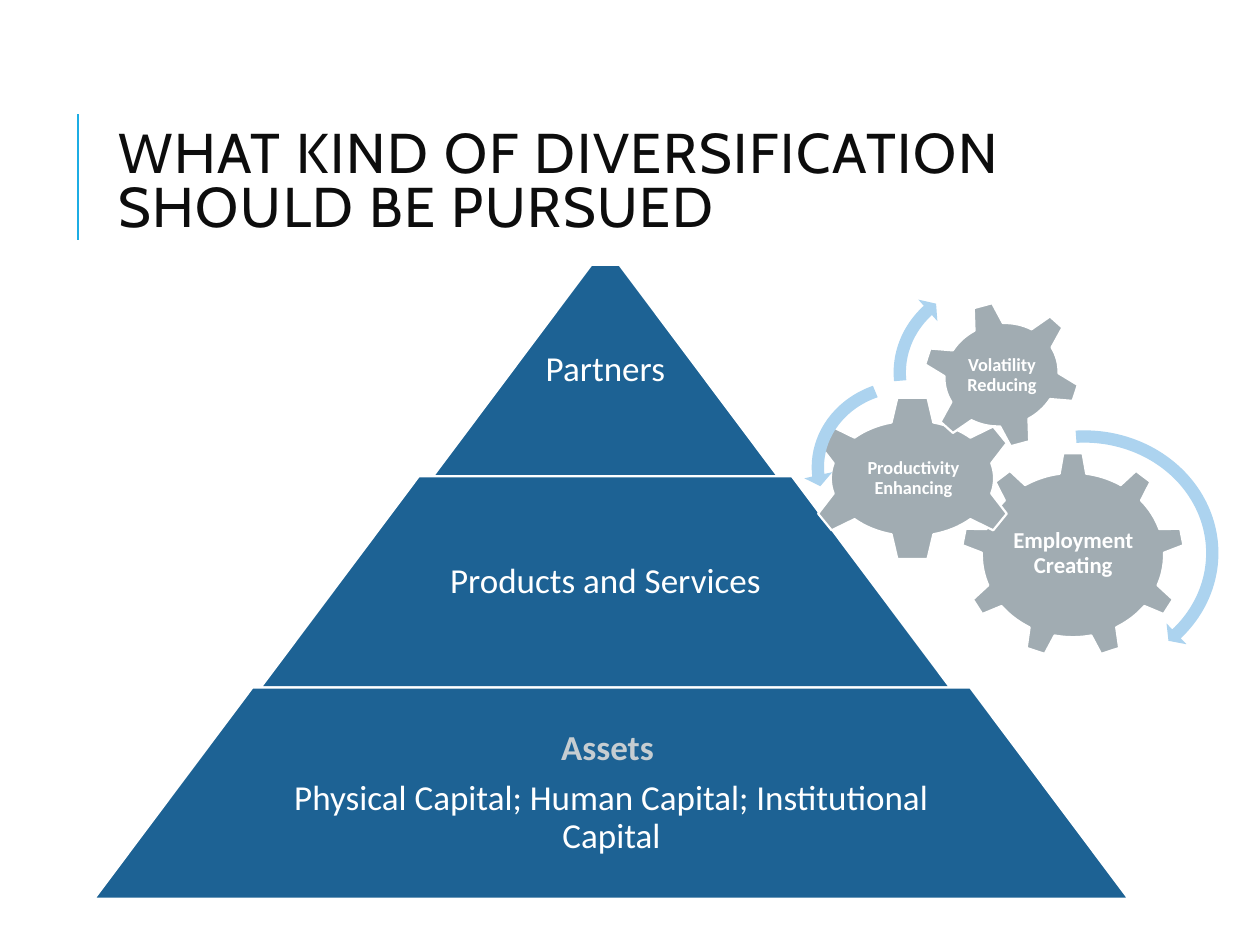
from pptx import Presentation
from pptx.dml.color import RGBColor
from pptx.enum.shapes import MSO_CONNECTOR, MSO_SHAPE
from pptx.enum.text import MSO_ANCHOR, PP_ALIGN
from pptx.oxml.ns import qn
from pptx.util import Cm, Pt
from lxml import etree

STRAIGHT = MSO_CONNECTOR.STRAIGHT
TRAPEZOID = MSO_SHAPE.TRAPEZOID
GEAR_6, GEAR_9 = MSO_SHAPE.GEAR_6, MSO_SHAPE.GEAR_9
ARC, LEFT_ARC = MSO_SHAPE.CIRCULAR_ARROW, MSO_SHAPE.LEFT_CIRCULAR_ARROW
MIDDLE = MSO_ANCHOR.MIDDLE
LEFT, CENTER = PP_ALIGN.LEFT, PP_ALIGN.CENTER

WHITE, BLACK, CYAN = "FFFFFF", "0D0D0D", "1CADE4"
BLUE, GRAY, SKY, SILVER = "1D6294", "A1ACB2", "ACD3EF", "C6CDD1"

TIERS = [
    ([("Partners", WHITE, False)], 1, 0),
    ([("Products and Services", WHITE, False)], 0.65, 0),
    ([("Assets ", SILVER, True),
      ("Physical Capital; Human Capital; Institutional Capital", WHITE, False)], 0.65, 0.12),
]
GEARS = [
    (GEAR_9, (3.18, 3.68, 4.5, 4.14), 0, "Employment Creating", (4.09, 4.65, 2.69, 2.13), 13),
    (GEAR_6, (0.05, 2.54, 4.29, 3.33), 0, "Productivity Enhancing", (1.07, 3.38, 2.29, 1.65), 10.5),
    (GEAR_6, (2.39, 0.64, 3.2, 2.95), 345, "Volatility Reducing", (3.1, 1.3, 1.8, 1.65), 10.5),
]
ARROWS = [
    (ARC, (2.79, 3.07, 5.74, 5.28), (0.047, 2.99, 24.737, 159.561, 0.055)),
    (LEFT_ARC, (0, 2.06, 4.17, 3.84), (0.065, 4.3, 104.891, 148.378, 0.075)),
    (ARC, (1.65, 0, 4.5, 4.14), (0.06, 3.941, 133.138, 105.082, 0.07)),
]


def rgb(value):
    """Return the colour for a hex string."""
    return RGBColor.from_string(value)


def add_figure(s, kind, box, fill, outline=None, adjust=()):
    """Add a flat preset shape in a box given in centimetres."""
    sp = s.shapes.add_shape(kind, *map(Cm, box))
    sp.shadow.inherit = False
    sp.fill.solid()
    sp.fill.fore_color.rgb = rgb(fill)
    if outline:
        sp.line.color.rgb = rgb(outline)
        sp.line.width = Pt(1.25)
    else:
        sp.line.fill.background()
    for i, value in enumerate(adjust):
        sp.adjustments[i] = value
    return sp


def add_text(s, box, items, size, font="Calibri", align=CENTER, spacing=0.9, after=0.35, inset=0.07):
    """Add a text box with one paragraph per (text, colour, bold) item."""
    tf = s.shapes.add_textbox(*map(Cm, box)).text_frame
    tf.word_wrap = True
    tf.vertical_anchor = MIDDLE
    tf.margin_left = tf.margin_right = tf.margin_top = tf.margin_bottom = Cm(inset)
    for i, (text, color, bold) in enumerate(items):
        p = tf.add_paragraph() if i else tf.paragraphs[0]
        p.text = text
        p.alignment = align
        p.line_spacing = spacing
        p.space_after = Pt(size * after)
        r = p.runs[0]
        r.font.name, r.font.size, r.font.bold = font, Pt(size), bold
        r.font.color.rgb = rgb(color)
    return tf


def add_heading(s, left, top, width, height):
    """Place the title and the accent rule to its left."""
    x = left - 0.56
    rule = s.shapes.add_connector(STRAIGHT, Cm(x), Cm(top + 3.2), Cm(x), Cm(top + 0.66))
    rule.line.color.rgb = rgb(CYAN)
    rule.line.width = Pt(1.5)
    etree.SubElement(rule._element.spPr, qn("a:effectLst"))
    title = [("WHAT KIND OF DIVERSIFICATION SHOULD BE PURSUED", BLACK, False)]
    tf = add_text(s, (left, top, width, height), title, 32, "Cabin", LEFT, 0.8, 0, 0.25)
    tf.paragraphs[0].runs[0].font._element.set("spc", "100")


def add_pyramid(s, left, top, width, height):
    """Stack the tiers, each wider than the one above by the same step."""
    step = height / len(TIERS)
    for i, (items, share, shift) in enumerate(TIERS):
        w = width * (i + 1) / len(TIERS)
        center = left + width / 2 + shift
        y = top + i * step
        add_figure(s, TRAPEZOID, (center - w / 2, y, w, step), BLUE, WHITE, [0.749])
        add_text(s, (center - w * share / 2, y, w * share, step), items, 20)


def add_gears(s, left, top):
    """Place the labelled gears and then their turning arrows."""
    def place(box):
        return left + box[0], top + box[1], box[2], box[3]

    for kind, box, angle, label, label_box, size in GEARS:
        add_figure(s, kind, place(box), GRAY, WHITE).rotation = angle
        add_text(s, place(label_box), [(label, WHITE, True)], size, inset=0.05)
    for kind, box, adjust in ARROWS:
        add_figure(s, kind, place(box), SKY, adjust=adjust)


def main():
    """Build the slide and save it."""
    prs = Presentation()
    prs.slide_width, prs.slide_height = Cm(25.4), Cm(19.05)
    s = prs.slides.add_slide(prs.slide_layouts[6])
    add_heading(s, 2.13, 1.63, 20.24, 4.17)
    add_pyramid(s, 1.78, 5.34, 20.85, 12.78)
    add_gears(s, 16.2, 5.44)
    prs.save("out.pptx")


if __name__ == "__main__":
    main()
